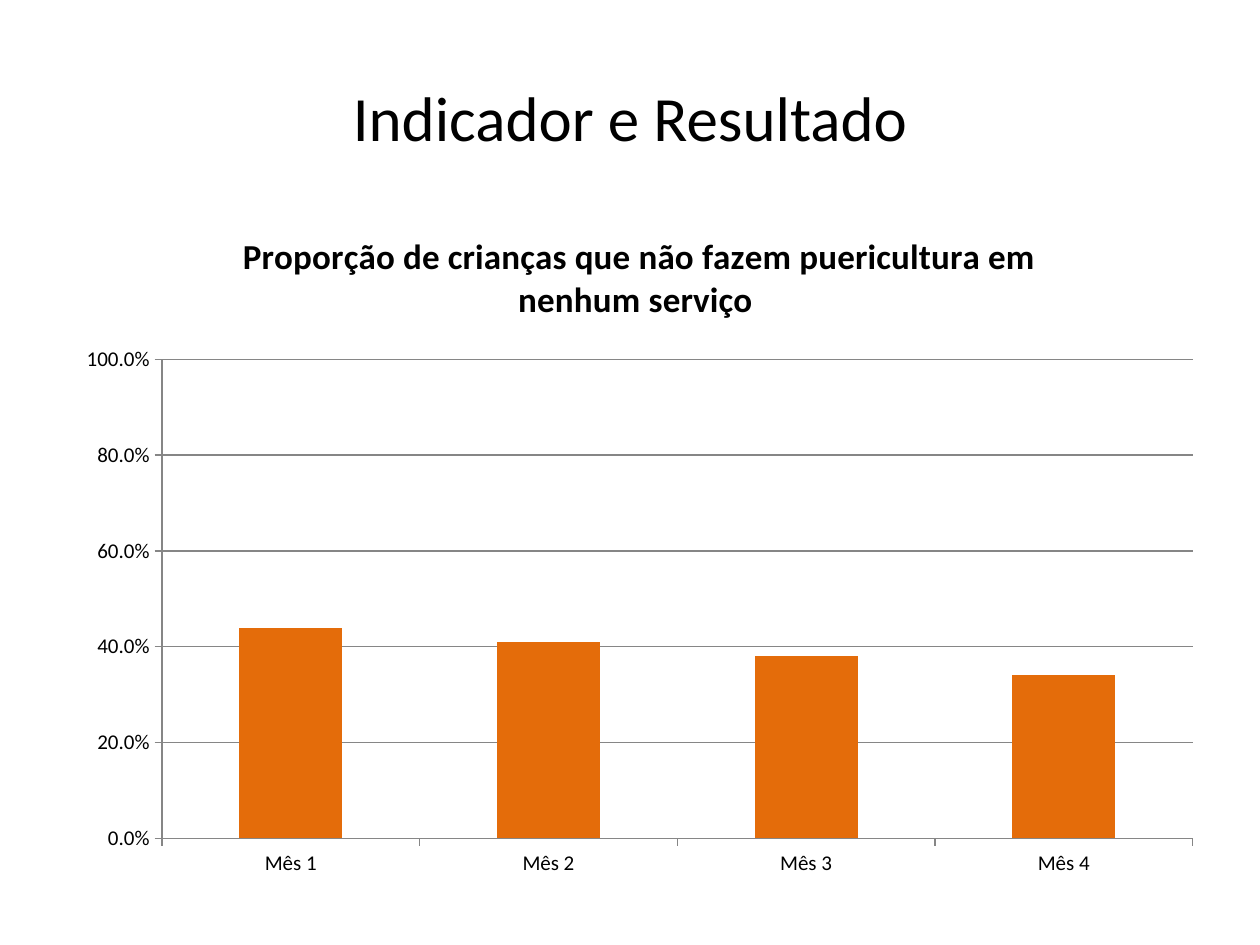
"""Build the indicator slide with a monthly column chart."""
from lxml import etree
from pptx import Presentation
from pptx.chart.data import CategoryChartData
from pptx.dml.color import RGBColor
from pptx.enum.chart import XL_CHART_TYPE, XL_TICK_MARK
from pptx.enum.text import MSO_ANCHOR, PP_ALIGN
from pptx.util import Inches, Pt

COLUMNS = XL_CHART_TYPE.COLUMN_CLUSTERED
OUTSIDE = XL_TICK_MARK.OUTSIDE
MIDDLE, CENTER = MSO_ANCHOR.MIDDLE, PP_ALIGN.CENTER

HEADING = "Indicador e Resultado"
INDICATOR = "Proporção de crianças que não fazem puericultura em nenhum serviço "
MONTHS = {"Mês 1": 0.44, "Mês 2": 0.41, "Mês 3": 0.38, "Mês 4": 0.34}

THEME = {
    "font": "Calibri",
    "text": RGBColor(0, 0, 0),
    "bar": RGBColor(0xE4, 0x6C, 0x0A),
    "line": RGBColor(0x86, 0x86, 0x86),
    "heading": 36, "chart_title": 20, "axis": 12, "chart": 10,
}
HEADING_AREA = (0.5, 0.3, 9, 1.25)
CHART_AREA = (0.51, 1.62, 9.13, 5.43)
PLOT_AREA = {"x": 0.085, "y": 0.227, "w": 0.896, "h": 0.7}
VALUE_SCALE = {"minimum_scale": 0, "maximum_scale": 1, "major_unit": 0.2,
               "has_major_gridlines": True}


def style_font(font, size, bold=False):
    """Apply the theme font at a named size."""
    values = {"name": THEME["font"], "size": Pt(THEME[size]), "bold": bold}
    for name, value in values.items():
        setattr(font, name, value)
    font.color.rgb = THEME["text"]


def style_line(line):
    """Give a chart line the theme colour and width."""
    line.color.rgb = THEME["line"]
    line.width = Pt(0.75)


def place_plot(chart):
    """Fix the inner plot area as fractions of the chart."""
    plot_area = chart.plots[0]._element.getparent()
    space = etree.QName(plot_area).namespace
    for old in plot_area.findall(f"{{{space}}}layout"):
        plot_area.remove(old)
    layout = etree.Element(f"{{{space}}}layout")
    manual = etree.SubElement(layout, f"{{{space}}}manualLayout")
    settings = {"layoutTarget": "inner", "xMode": "edge", "yMode": "edge", **PLOT_AREA}
    for name, value in settings.items():
        etree.SubElement(manual, f"{{{space}}}{name}", val=str(value))
    plot_area.insert(0, layout)


def add_heading(page):
    """Fill and place the title placeholder."""
    box = page.shapes.title
    box.left, box.top, box.width, box.height = map(Inches, HEADING_AREA)
    box.text_frame.text = HEADING
    box.text_frame.vertical_anchor = MIDDLE
    para = box.text_frame.paragraphs[0]
    para.alignment = CENTER
    style_font(para.runs[0].font, "heading")


def add_columns(page):
    """Add the column chart of the indicator."""
    data = CategoryChartData(number_format="0.0%")
    data.categories = list(MONTHS)
    data.add_series(INDICATOR, list(MONTHS.values()))
    chart = page.shapes.add_chart(COLUMNS, *map(Inches, CHART_AREA), data).chart
    chart.has_legend = False
    style_font(chart.font, "chart")

    chart.has_title = True
    title = chart.chart_title
    title.include_in_layout = False
    title.text_frame.text = INDICATOR
    style_font(title.text_frame.paragraphs[0].runs[0].font, "chart_title", bold=True)

    plot = chart.plots[0]
    plot.gap_width = 150
    plot.vary_by_categories = False
    fill = plot.series[0].format.fill
    fill.solid()
    fill.fore_color.rgb = THEME["bar"]

    for axis in (chart.category_axis, chart.value_axis):
        axis.major_tick_mark = OUTSIDE
        style_font(axis.tick_labels.font, "axis")
        style_line(axis.format.line)
    values = chart.value_axis
    for name, value in VALUE_SCALE.items():
        setattr(values, name, value)
    values.tick_labels.number_format = "0.0%"
    values.tick_labels.number_format_is_linked = False
    style_line(values.major_gridlines.format.line)
    place_plot(chart)


def main():
    """Create the deck and save it."""
    deck = Presentation()
    deck.slide_width, deck.slide_height = Inches(10), Inches(7.5)
    page = deck.slides.add_slide(deck.slide_layouts[5])
    add_columns(page)
    add_heading(page)
    deck.save("out.pptx")


if __name__ == "__main__":
    main()
